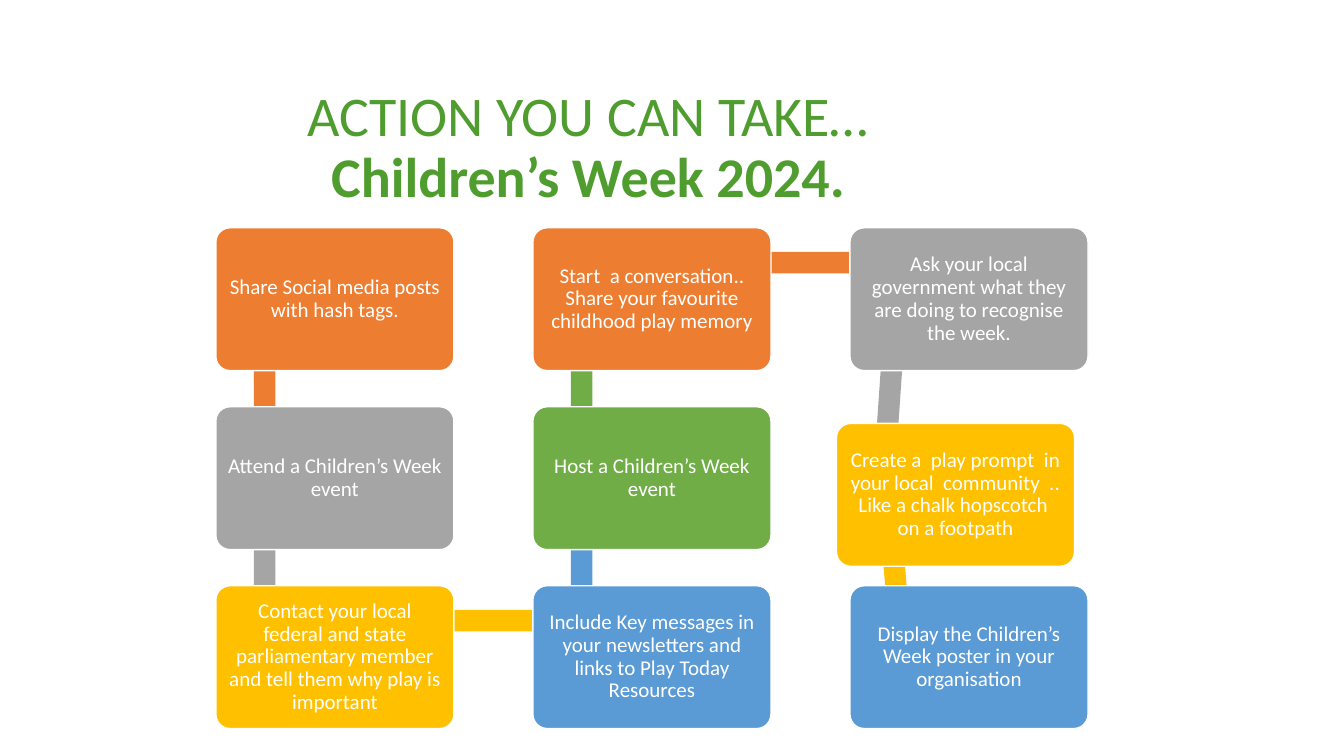
import math
from dataclasses import dataclass

import pptx
import pptx.dml.color
import pptx.enum.shapes
import pptx.enum.text
import pptx.util

Cm = pptx.util.Cm
Pt = pptx.util.Pt
SHAPE = pptx.enum.shapes.MSO_SHAPE

FONT = "Calibri"
GREEN_TITLE, WHITE = "509D2F", "FFFFFF"
ORANGE, GREY, YELLOW = "ED7D31", "A5A5A5", "FFC000"
BLUE, GREEN = "5B9BD5", "70AD47"

# All lengths in centimetres
CARD_WIDTH, CARD_HEIGHT = 6.0, 3.6
GRID_LEFT, GRID_TOP = 5.44, 5.74
COLUMN_PITCH, ROW_PITCH = 7.99, 4.51
BAR_THICKNESS = 0.54
BAR_INSET_X, BAR_INSET_Y = 1.23, 0.88


@dataclass(frozen=True)
class Action:
    text: str
    color: str
    column: int
    row: int
    shift_x: float = 0
    shift_y: float = 0

    @property
    def left(self) -> float:
        return GRID_LEFT + self.column * COLUMN_PITCH + self.shift_x

    @property
    def top(self) -> float:
        return GRID_TOP + self.row * ROW_PITCH + self.shift_y


ACTIONS = [
    Action("Share Social media posts with hash tags.", ORANGE, 0, 0),
    Action("Attend a Children’s Week event", GREY, 0, 1),
    Action("Contact your local federal and state parliamentary member "
           "and tell them why play is important", YELLOW, 0, 2),
    Action("Include Key messages in your newsletters and links to "
           "Play Today Resources", BLUE, 1, 2),
    Action("Host a Children’s Week event", GREEN, 1, 1),
    Action("Start  a conversation.. Share your favourite "
           "childhood play memory", ORANGE, 1, 0),
    Action("Ask your local government what they are doing to "
           "recognise the week.", GREY, 2, 0),
    Action("Create a  play prompt  in your local  community  .. "
           "Like a chalk hopscotch  on a footpath", YELLOW, 2, 1, -0.34, 0.42),
    Action("Display the Children’s Week poster in your organisation",
           BLUE, 2, 2),
]


def rgb(color: str) -> pptx.dml.color.RGBColor:
    return pptx.dml.color.RGBColor.from_string(color)


def set_up_frame(frame, inset: float) -> None:
    frame.word_wrap = True
    frame.vertical_anchor = pptx.enum.text.MSO_ANCHOR.MIDDLE
    frame.margin_left = frame.margin_right = Cm(inset)
    frame.margin_top = frame.margin_bottom = Cm(inset)


def write_line(paragraph, text: str, size: int, color: str,
               bold: bool = False) -> None:
    paragraph.alignment = pptx.enum.text.PP_ALIGN.CENTER
    paragraph.line_spacing = 0.9
    run = paragraph.add_run()
    run.text = text
    run.font.name = FONT
    run.font.size = Pt(size)
    run.font.bold = bold
    run.font.color.rgb = rgb(color)


def add_title(slide) -> None:
    frame = slide.shapes.add_textbox(Cm(0), Cm(2.2), Cm(29.64), Cm(3.1)).text_frame
    set_up_frame(frame, 0)
    write_line(frame.paragraphs[0], "ACTION YOU CAN TAKE…", 40, GREEN_TITLE)
    write_line(frame.add_paragraph(), "Children’s Week 2024.", 40, GREEN_TITLE, True)


def add_bar(slide, start: Action, end: Action) -> None:
    """Lay a bar that runs from one action to the next, under both cards."""
    dx, dy = end.left - start.left, end.top - start.top
    length = math.hypot(dx, dy)
    center_x = start.left + BAR_INSET_X + dx / 2
    center_y = start.top + BAR_INSET_Y + dy / 2
    bar = slide.shapes.add_shape(
        SHAPE.RECTANGLE, Cm(center_x - length / 2),
        Cm(center_y - BAR_THICKNESS / 2), Cm(length), Cm(BAR_THICKNESS))
    bar.rotation = math.degrees(math.atan2(dy, dx))
    bar.shadow.inherit = False
    bar.fill.solid()
    bar.fill.fore_color.rgb = rgb(start.color)
    bar.line.fill.background()


def add_card(slide, action: Action) -> None:
    card = slide.shapes.add_shape(
        SHAPE.ROUNDED_RECTANGLE, Cm(action.left), Cm(action.top),
        Cm(CARD_WIDTH), Cm(CARD_HEIGHT))
    card.adjustments[0] = 0.1
    card.shadow.inherit = False
    card.fill.solid()
    card.fill.fore_color.rgb = rgb(action.color)
    card.line.color.rgb = rgb(WHITE)
    card.line.width = Pt(1)
    set_up_frame(card.text_frame, 0.16)
    write_line(card.text_frame.paragraphs[0], action.text, 15, WHITE)


def main() -> None:
    deck = pptx.Presentation()
    deck.slide_width, deck.slide_height = Cm(33.87), Cm(19.05)
    slide = deck.slides.add_slide(deck.slide_layouts[6])
    add_title(slide)
    for start, end in zip(ACTIONS, ACTIONS[1:]):
        add_bar(slide, start, end)
    for action in ACTIONS:
        add_card(slide, action)
    deck.save("out.pptx")


if __name__ == "__main__":
    main()
